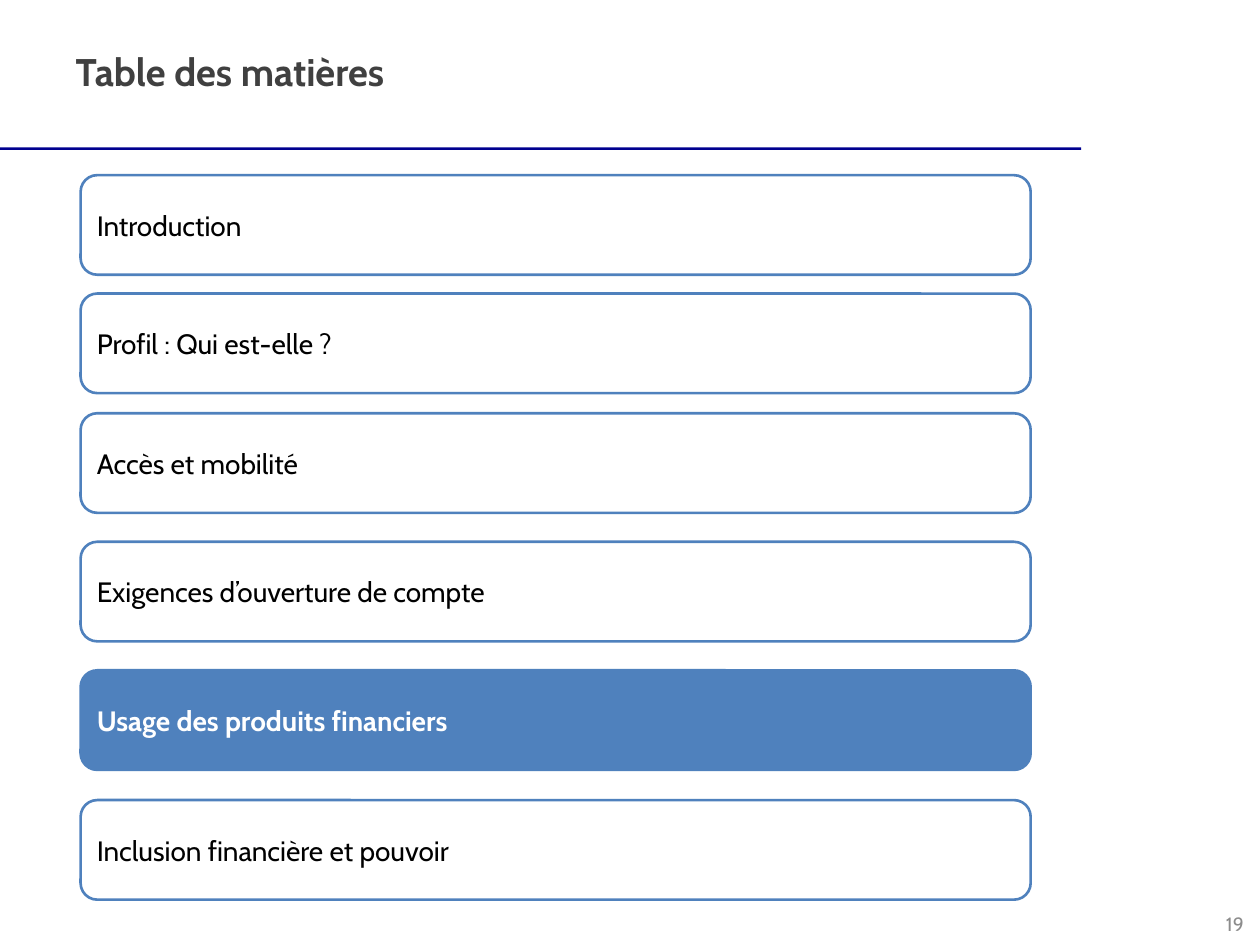
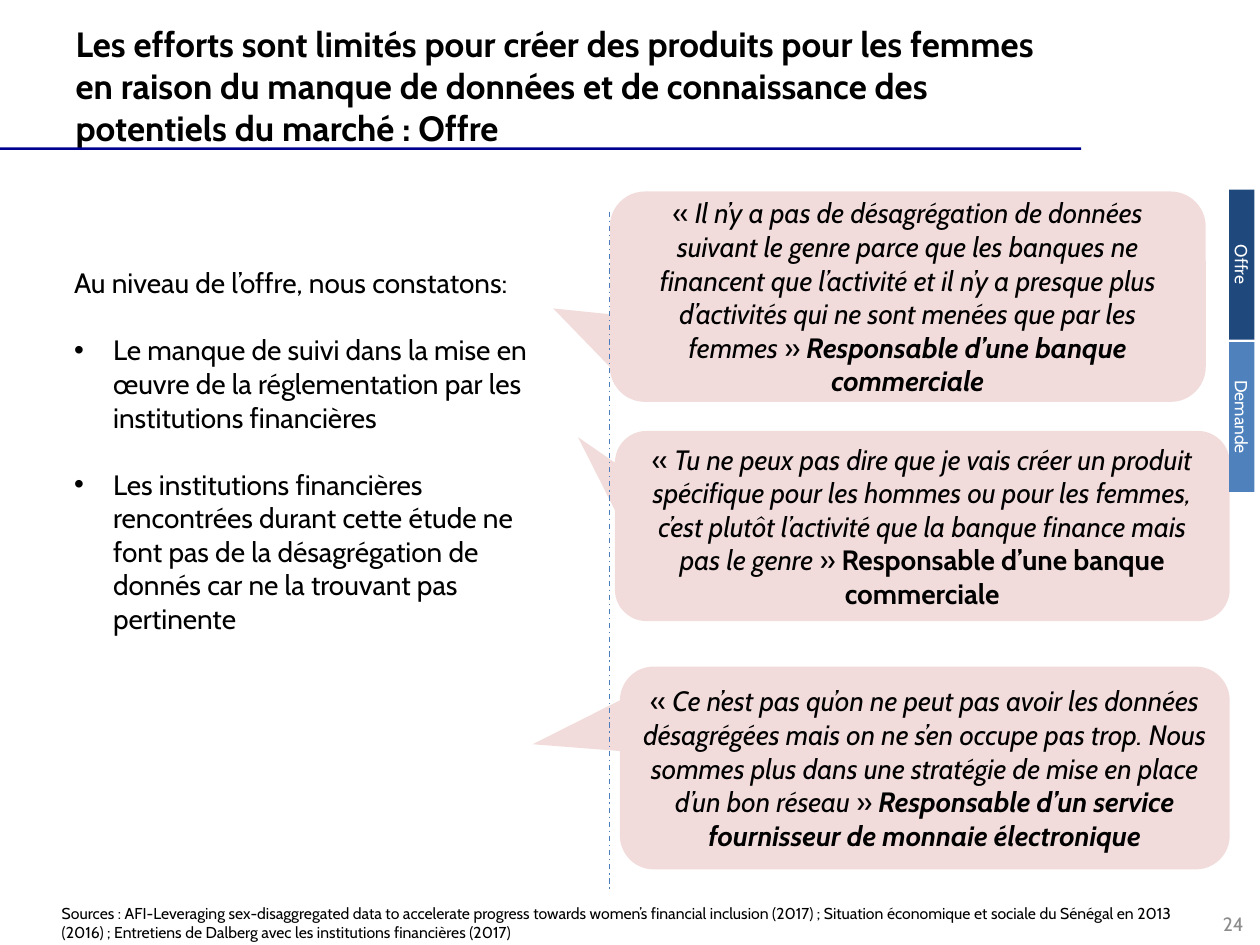
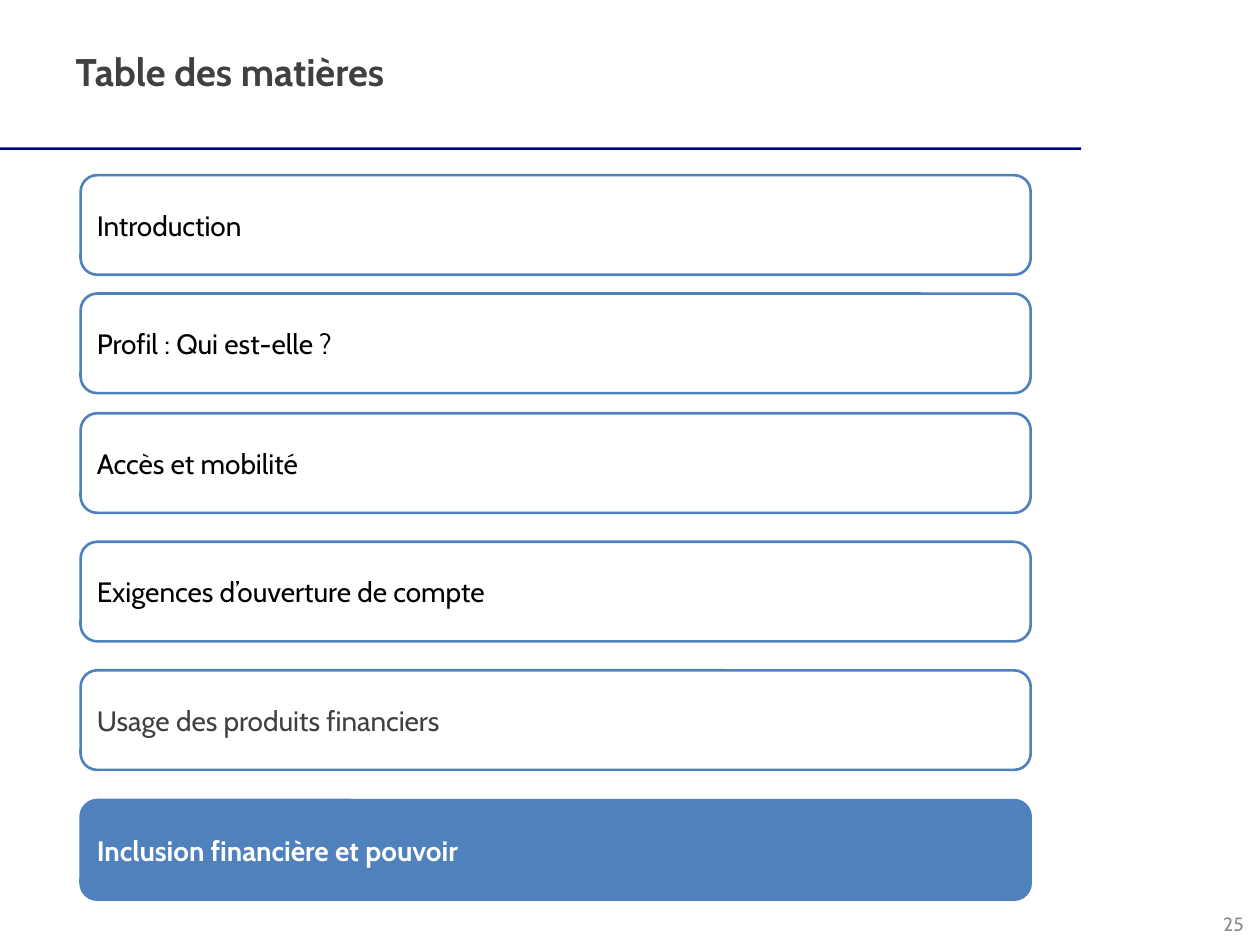
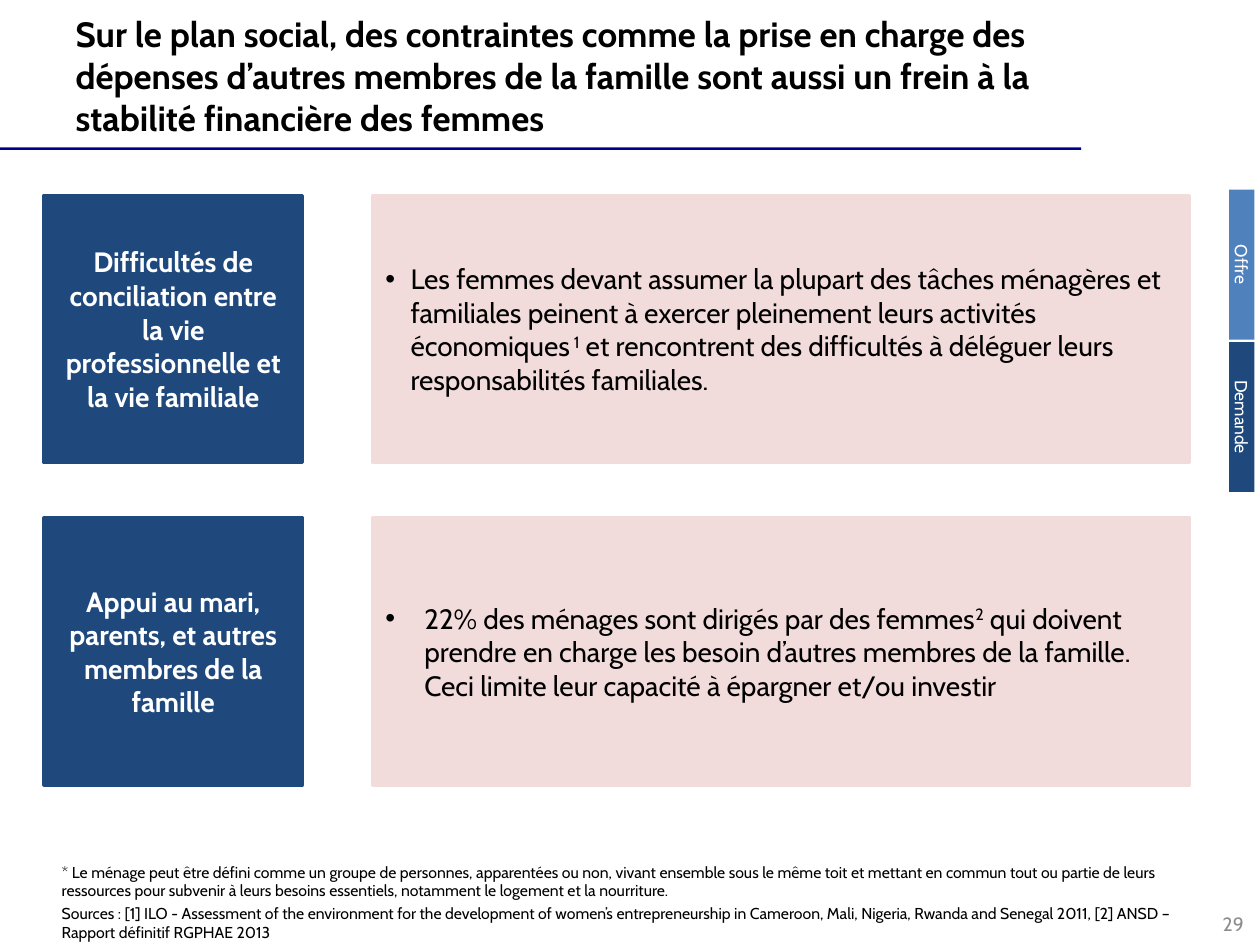
from lxml.etree import SubElement
from pptx import Presentation
from pptx.dml.color import RGBColor
from pptx.enum.dml import MSO_LINE
from pptx.enum.shapes import MSO_CONNECTOR, MSO_SHAPE
from pptx.enum.text import MSO_ANCHOR, MSO_AUTO_SIZE, PP_ALIGN
from pptx.oxml.ns import qn
from pptx.util import Inches, Pt

FONT = "Cabin"
BLACK, WHITE, CHARCOAL, GREY = "000000", "FFFFFF", "404040", "8C8C8C"
BLUE, NAVY, PINK, RULE, DIVIDER = "4F81BD", "1F497D", "F2DCDB", "000090", "4B7EBC"
ITALIC, BOLD = {"italic": True}, {"bold": True}
BOLD_ITALIC = {**ITALIC, **BOLD}
SUPERSCRIPT = {"baseline": 30000}
LEFT, CENTER, RIGHT = PP_ALIGN.LEFT, PP_ALIGN.CENTER, PP_ALIGN.RIGHT

TITLE_BOX = (0.5, 0.33, 8.08, 0.67)
CONTENTS_BOX = (0.64, 1.39, 7.54, 0.79)
CONTENTS_OFFSETS = (0, 0.94, 1.89, 2.91, 3.93, 4.96)
CONTENTS = (
    "Introduction",
    "Profil : Qui est-elle ?",
    "Accès et mobilité",
    "Exigences d’ouverture de compte",
    "Usage des produits financiers",
    "Inclusion financière et pouvoir",
)
QUOTES = (
    ((4.84, 1.52, 4.73, 1.67), (-0.595, 0.056, 0.167), [
        ("«\u00a0", {}),
        ("Il n’y a pas de désagrégation de données suivant le genre parce que les banques ne "
         "financent que l’activité et il n’y a presque plus d’activités qui ne sont menées que "
         "par les femmes", ITALIC),
        ("\u00a0» ", {}),
        ("Responsable d’une banque commerciale", BOLD_ITALIC),
    ]),
    ((4.88, 3.42, 4.88, 1.51), (-0.56, -0.467, 0.167), [
        ("« ", {}),
        ("Tu ne peux pas dire que je vais créer un produit spécifique pour les hommes ou pour "
         "les femmes, c’est plutôt l’activité que la banque finance mais pas le genre ", ITALIC),
        ("» ", {}),
        ("Responsable d’une banque commerciale", BOLD),
    ]),
    ((4.92, 5.29, 4.84, 1.61), (-0.643, -0.117, 0.167), [
        ("«\u00a0", {}),
        ("Ce n’est pas qu’on ne peut pas avoir les données désagrégées mais on ne s’en occupe "
         "pas trop. Nous sommes plus dans une stratégie de mise en place d’un bon réseau\u00a0", ITALIC),
        ("» ", {}),
        ("Responsable d’un service fournisseur de monnaie électronique", BOLD_ITALIC),
    ]),
)
FINDINGS = (
    "Le manque de suivi dans la mise en œuvre de la réglementation par les institutions financières",
    "Les institutions financières rencontrées durant cette étude ne font pas de la désagrégation "
    "de donnés car ne la trouvant pas pertinente",
)
CONSTRAINTS = (
    ("Difficultés de conciliation entre la vie professionnelle et la vie familiale", 0.2, [
        ("Les femmes devant assumer la plupart des tâches ménagères et familiales peinent à "
         "exercer pleinement leurs activités économiques", {}),
        (" 1", SUPERSCRIPT),
        (" et rencontrent des difficultés à déléguer leurs responsabilités familiales.", {}),
    ]),
    ("Appui au mari, parents, et autres membres de la famille", 0.31, [
        ("22% des ménages sont dirigés par des femmes", {}),
        ("2", SUPERSCRIPT),
        (" qui doivent prendre en charge les besoin d’autres membres de la famille. Ceci limite "
         "leur capacité à épargner et/ou investir", {}),
    ]),
)


def colour(value):
    return RGBColor.from_string(value)


def inches(box):
    return [Inches(value) for value in box]


def set_frame(shape, anchor=MSO_ANCHOR.MIDDLE, margins=(0.1, 0.05, 0.1, 0.05)):
    frame = shape.text_frame
    sides = ("margin_left", "margin_top", "margin_right", "margin_bottom")
    values = {
        "word_wrap": True,
        "auto_size": MSO_AUTO_SIZE.NONE,
        "vertical_anchor": anchor,
        **dict(zip(sides, inches(margins))),
    }
    for name, value in values.items():
        setattr(frame, name, value)
    return frame


def write(paragraph, content, size=16, ink=BLACK, align=LEFT, hanging=0, bullet=False, before=0, **base):
    properties = paragraph._p.get_or_add_pPr()
    if hanging:
        properties.set("marL", str(Inches(hanging)))
        properties.set("indent", str(-Inches(hanging)))
    if bullet:
        SubElement(properties, qn("a:buFont")).set("typeface", "Arial")
        SubElement(properties, qn("a:buChar")).set("char", "•")
    paragraph.alignment = align
    paragraph.space_before = Pt(before)
    for text, changes in [(content, {})] if isinstance(content, str) else content:
        run = paragraph.add_run()
        run.text = text
        values = {"name": FONT, "size": Pt(size), **base, **changes}
        baseline = values.pop("baseline", None)
        for name, value in values.items():
            setattr(run.font, name, value)
        run.font.color.rgb = colour(ink)
        if baseline:
            run.font._element.set("baseline", str(baseline))


def add_box(shapes, kind, box, fill=None, line=None, width=1.5):
    shape = shapes.add_shape(kind, *inches(box))
    shape.shadow.inherit = False
    if fill:
        shape.fill.solid()
        shape.fill.fore_color.rgb = colour(fill)
    else:
        shape.fill.background()
    if line:
        shape.line.color.rgb = colour(line)
        shape.line.width = Pt(width)
    else:
        shape.line.fill.background()
    return shape


def add_text(slide, box, content, anchor=MSO_ANCHOR.MIDDLE, **style):
    frame = set_frame(slide.shapes.add_textbox(*inches(box)), anchor)
    write(frame.paragraphs[0], content, **style)
    return frame


def add_slide(presentation, title, number, top, **style):
    slide = presentation.slides.add_slide(presentation.slide_layouts[5])
    heading = slide.shapes.title
    left, _, width, height = TITLE_BOX
    heading.left, heading.top, heading.width, heading.height = inches((left, top, width, height))
    write(set_frame(heading, MSO_ANCHOR.TOP).paragraphs[0], title, bold=True, **style)
    add_box(slide.shapes, MSO_SHAPE.RECTANGLE, (0, 1.17, 8.58, 0.02), RULE)
    add_text(slide, (7.72, 7.13, 2.25, 0.4), str(number), size=11, ink=GREY, align=RIGHT)
    return slide


def add_footnotes(slide, notes):
    shape = slide.shapes.add_textbox(*inches((0.49, 7.05, 8.86, 0.42)))
    frame = set_frame(shape, MSO_ANCHOR.BOTTOM, (0, 0, 0, 0))
    for index, note in enumerate(notes):
        paragraph = frame.add_paragraph() if index else frame.paragraphs[0]
        write(paragraph, note, size=9, before=1.8 if index else 0)


def add_side_tabs(slide, active):
    group = slide.shapes.add_group_shape()
    for index, label in enumerate(("Offre", "Demande")):
        fill = NAVY if label == active else BLUE
        tab = add_box(group.shapes, MSO_SHAPE.RECTANGLE, (9.26, 2 + 1.21 * index, 1.19, 0.2), fill)
        tab.rotation = 90
        write(set_frame(tab).paragraphs[0], label, size=10, ink=WHITE, align=CENTER)


def add_contents_slide(presentation, number, active, inks):
    slide = add_slide(presentation, "Table des matières", number, 0.33, size=22, ink=CHARCOAL)
    left, top, width, height = CONTENTS_BOX
    for label, offset in zip(CONTENTS, CONTENTS_OFFSETS):
        chosen = label == active
        entry = add_box(slide.shapes, MSO_SHAPE.ROUNDED_RECTANGLE, (left, top + offset, width, height),
                        BLUE if chosen else None, BLUE)
        frame = set_frame(entry, margins=(0.09, 0.04, 0.09, 0.04))
        ink = WHITE if chosen else inks.get(label, BLACK)
        write(frame.paragraphs[0], label, ink=ink, hanging=0.38, bold=chosen)


def add_quote(slide, box, adjustments, content):
    quote = add_box(slide.shapes, MSO_SHAPE.ROUNDED_RECTANGULAR_CALLOUT, box, PINK)
    for index, value in enumerate(adjustments):
        quote.adjustments[index] = value
    write(set_frame(quote).paragraphs[0], content, align=CENTER)


def add_divider(slide, left, top, bottom):
    divider = slide.shapes.add_connector(MSO_CONNECTOR.STRAIGHT, *inches((left, top, left, bottom)))
    divider.line.color.rgb = colour(DIVIDER)
    divider.line.width = Pt(0.75)
    divider.line.dash_style = MSO_LINE.DASH_DOT
    SubElement(divider.element.spPr, qn("a:effectLst"))


def add_findings(slide, box):
    frame = add_text(slide, box, "Au niveau de l’offre, nous constatons:")
    frame.margin_bottom = Inches(0.25)
    for finding in FINDINGS:
        write(frame.add_paragraph(), finding, hanging=0.31, bullet=True, before=19.2)


def add_supply_slide(presentation):
    slide = add_slide(
        presentation,
        "Les efforts sont limités pour créer des produits pour les femmes en raison du manque de "
        "données et de connaissance des potentiels du marché : Offre",
        24, 0.13, size=20)
    add_footnotes(slide, [
        "Sources : AFI-Leveraging sex-disaggregated data to accelerate progress towards women’s "
        "financial inclusion (2017) ; Situation économique et sociale du Sénégal en 2013 (2016) ; "
        "Entretiens de Dalberg avec les institutions financières (2017)"])
    for box, adjustments, content in QUOTES:
        add_quote(slide, box, adjustments, content)
    add_divider(slide, 4.84, 1.68, 7.06)
    add_side_tabs(slide, "Offre")
    add_findings(slide, (0.49, 2.24, 3.8, 2.87))


def add_constraint(slide, top, label, hanging, content):
    height = 2.12
    heading = add_box(slide.shapes, MSO_SHAPE.RECTANGLE, (0.35, top, 2.05, height), NAVY, NAVY, 2)
    write(set_frame(heading).paragraphs[0], label, ink=WHITE, align=CENTER, bold=True)
    detail = add_box(slide.shapes, MSO_SHAPE.RECTANGLE, (2.96, top, 6.48, height), PINK, PINK, 2)
    write(set_frame(detail).paragraphs[0], content, hanging=hanging, bullet=True)


def add_demand_slide(presentation):
    slide = add_slide(
        presentation,
        "Sur le plan social, des contraintes comme la prise en charge des dépenses d’autres membres "
        "de la famille sont aussi un frein à la stabilité financière des femmes",
        29, 0.05, size=20)
    add_footnotes(slide, [
        "* Le ménage peut être défini comme un groupe de personnes, apparentées ou non, vivant "
        "ensemble sous le même toit et mettant en commun tout ou partie de leurs ressources pour "
        "subvenir à leurs besoins essentiels, notamment le logement et la nourriture.",
        "Sources : [1] ILO - Assessment of the environment for the development of women’s "
        "entrepreneurship in Cameroon, Mali, Nigeria, Rwanda and Senegal 2011, [2] ANSD – Rapport "
        "définitif RGPHAE 2013"])
    add_side_tabs(slide, "Demande")
    for index, constraint in enumerate(CONSTRAINTS):
        add_constraint(slide, 1.55 + 2.56 * index, *constraint)


def main():
    presentation = Presentation()
    presentation.slide_width, presentation.slide_height = inches((10, 7.5))
    add_contents_slide(presentation, 19, CONTENTS[4], {})
    add_supply_slide(presentation)
    add_contents_slide(presentation, 25, CONTENTS[5], {CONTENTS[4]: CHARCOAL})
    add_demand_slide(presentation)
    presentation.save("out.pptx")


if __name__ == "__main__":
    main()
